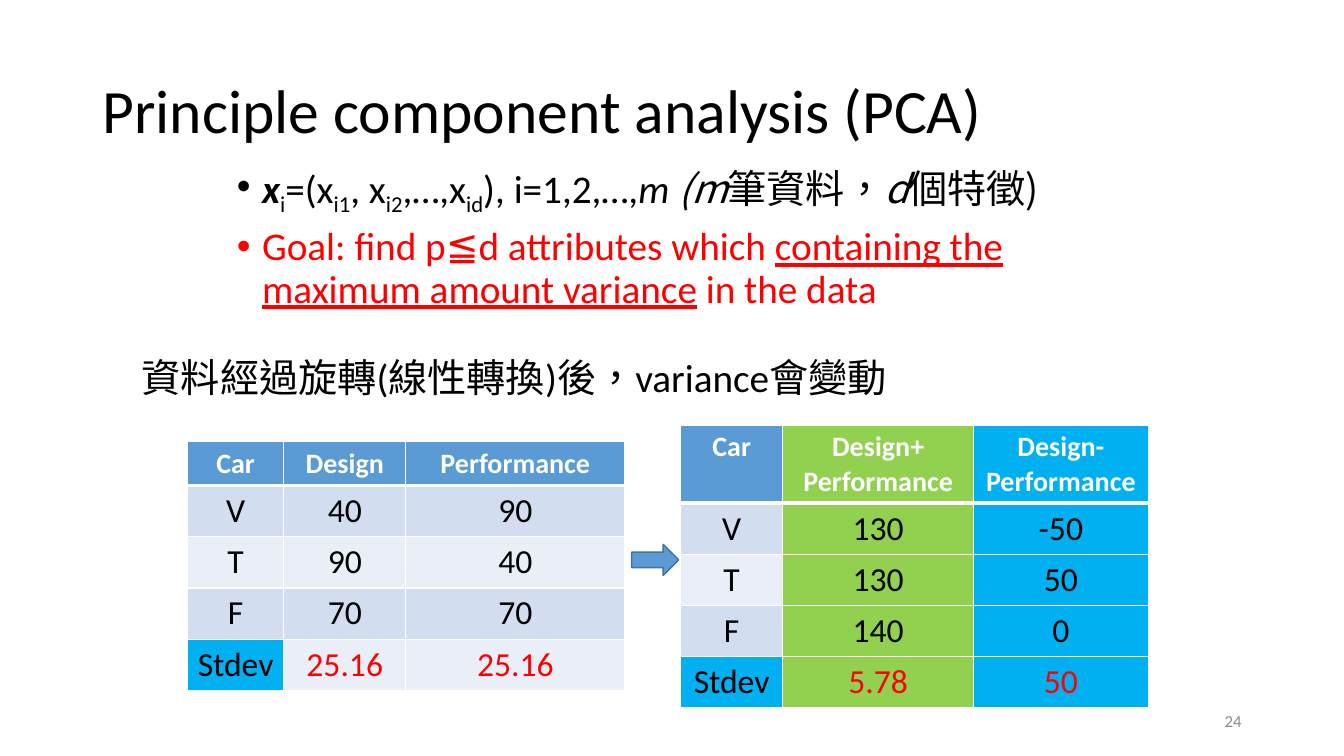
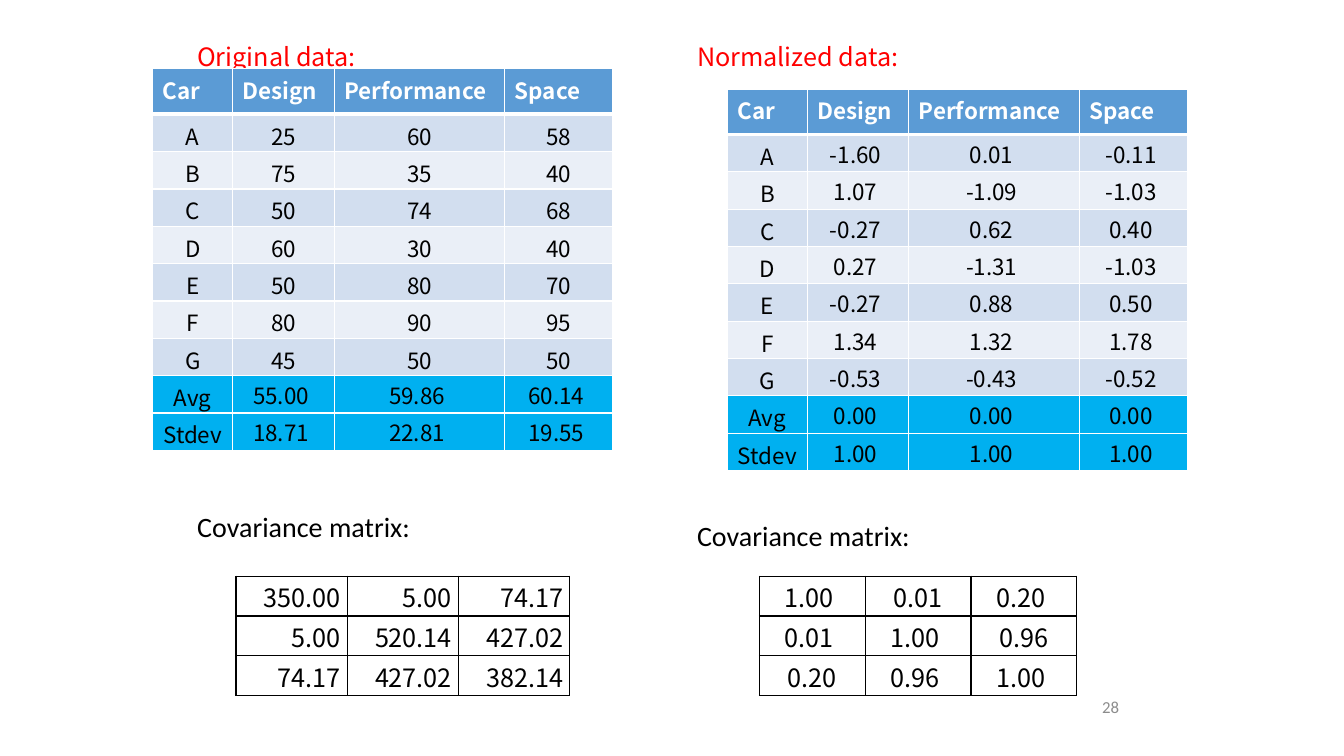
from dataclasses import dataclass, replace
from itertools import product

from lxml.etree import SubElement
from pptx import Presentation
from pptx.dml.color import RGBColor
from pptx.enum.lang import MSO_LANGUAGE_ID as Language
from pptx.enum.shapes import MSO_SHAPE as Preset
from pptx.enum.text import MSO_ANCHOR as Anchor, MSO_AUTO_SIZE as AutoSize, PP_ALIGN as Align
from pptx.oxml.ns import qn
from pptx.util import Emu, Inches, Pt


@dataclass(frozen=True)
class Theme:
    ink: str = "000000"
    paper: str = "FFFFFF"
    accent: str = "FF0000"
    muted: str = "8C8C8C"
    blue: str = "5B9BD5"
    blue_edge: str = "43739E"
    band_dark: str = "D2DEEF"
    band_light: str = "EAEFF7"
    sky: str = "00B0F0"
    green: str = "92D050"
    latin: str = "Calibri"
    cjk: str = "Noto Sans CJK SC"
    title: int = 44
    body: int = 28
    cell: int = 24
    label: int = 20
    heading: int = 18
    data: int = 16
    footer: int = 12


T = Theme()
WIDTH, HEIGHT = Inches(13.33), Inches(7.5)
COLUMNS, ROWS = 160, 90


@dataclass(frozen=True)
class Box:
    """A place on the slide, in grid columns and rows."""
    left: float
    top: float
    width: float = 0
    height: float = 0

    def inside(self, dx, dy, width=0, height=0):
        return Box(self.left + dx, self.top + dy, width, height)

    def emu(self):
        return (across(self.left), down(self.top),
                across(self.width), down(self.height))


@dataclass(frozen=True)
class Style:
    size: float
    color: str = T.ink
    font: str = T.latin
    bold: bool = False
    italic: bool = False
    underline: bool = False
    baseline: int = 0


@dataclass(frozen=True)
class CellLook:
    style: Style
    fill: str = ""
    align: Align = Align.CENTER
    anchor: Anchor = Anchor.TOP
    insets: tuple = (0.1, 0.05, 0.1, 0.05)
    line: str = T.paper


TIGHT = (0.01, 0.01, 0.01, 0)
NO_BOTTOM = (0.1, 0.05, 0.1, 0)
NARROW_SIDES = (0.08, 0.05, 0.08, 0.05)


def across(columns):
    return Emu(round(WIDTH * columns / COLUMNS))


def down(rows):
    return Emu(round(HEIGHT * rows / ROWS))


def rgb(color):
    return RGBColor.from_string(color)


def add_run(paragraph, text, style):
    run = paragraph.add_run()
    run.text = text
    font = run.font
    font.size, font.bold, font.italic = Pt(style.size), style.bold, style.italic
    font.underline = style.underline
    font.color.rgb = rgb(style.color)
    font.name = style.font
    font.language_id = Language.TAIWAN if hasattr(Language, "TAIWAN") else None
    properties = run._r.get_or_add_rPr()
    properties.set("lang", "zh-TW")
    SubElement(properties, qn("a:ea"), typeface=T.cjk)
    if style.baseline:
        properties.set("baseline", str(style.baseline * 1000))


def add_text(slide, box, text, style, align=Align.LEFT, anchor=Anchor.TOP):
    frame = slide.shapes.add_textbox(*box.emu()).text_frame
    frame.word_wrap = True
    frame.vertical_anchor = anchor
    paragraph = frame.paragraphs[0]
    paragraph.alignment = align
    add_run(paragraph, text, style)


def add_page_number(slide, box, number):
    add_text(slide, box, number, Style(T.footer, T.muted), Align.RIGHT, Anchor.MIDDLE)


def place(placeholder, box, anchor):
    placeholder.left, placeholder.top, placeholder.width, placeholder.height = box.emu()
    frame = placeholder.text_frame
    frame.auto_size = AutoSize.NONE
    frame.word_wrap = True
    frame.vertical_anchor = anchor
    return frame


def add_title(slide, box, text):
    paragraph = place(slide.shapes.title, box, Anchor.MIDDLE).paragraphs[0]
    paragraph.alignment = Align.LEFT
    paragraph.line_spacing = 0.9
    add_run(paragraph, text, Style(T.title))


def add_bullets(slide, box, bullets):
    frame = place(slide.placeholders[1], box, Anchor.TOP)
    for index, runs in enumerate(bullets):
        paragraph = frame.add_paragraph() if index else frame.paragraphs[0]
        paragraph.line_spacing = 0.9
        paragraph.space_before = Pt(10)
        indent = paragraph._p.get_or_add_pPr()
        indent.set("marL", str(Inches(0.25)))
        indent.set("indent", str(-Inches(0.25)))
        for text, style in runs:
            add_run(paragraph, text, style)


def add_border(cell, side, color, points):
    line = SubElement(cell._tc.get_or_add_tcPr(), qn("a:ln" + side), w=str(Pt(points)))
    SubElement(SubElement(line, qn("a:solidFill")), qn("a:srgbClr"), val=color)


def fill_cell(cell, text, look, thick_side=""):
    for side in "LRTB":
        add_border(cell, side, look.line, 3 if side == thick_side else 1)
    if look.fill:
        cell.fill.solid()
        cell.fill.fore_color.rgb = rgb(look.fill)
    else:
        cell.fill.background()
    cell.margin_left, cell.margin_top, cell.margin_right, cell.margin_bottom = map(
        Inches, look.insets)
    cell.vertical_anchor = look.anchor
    paragraph = cell.text_frame.paragraphs[0]
    paragraph.alignment = look.align
    for index, line in enumerate(text.split("\n")):
        if index:
            paragraph.add_line_break()
        add_run(paragraph, line, look.style)


def add_grid(slide, corner, widths, heights, rows, look_of, headed=True):
    """Add a table whose cells are styled by look_of(row, column, text)."""
    box = replace(corner, width=sum(widths), height=sum(heights))
    table = slide.shapes.add_table(len(rows), len(widths), *box.emu()).table
    table.first_row = table.horz_banding = False
    for column, width in zip(table.columns, widths):
        column.width = across(width)
    for row, height in zip(table.rows, heights):
        row.height = down(height)
    for r, c in product(range(len(rows)), range(len(widths))):
        thick = {0: "B", 1: "T"}.get(r, "") if headed else ""
        fill_cell(table.cell(r, c), rows[r][c], look_of(r, c, rows[r][c]), thick)


def band(row):
    return T.band_dark if row % 2 else T.band_light


def car_table(slide, corner, widths, header_height, rows, column_fills):
    def look_of(r, c, text):
        last = r == len(rows) - 1
        if r == 0:
            return CellLook(Style(T.label, T.paper, bold=True),
                            column_fills.get(c, T.blue), insets=NARROW_SIDES)
        fill = T.sky if last and c == 0 else column_fills.get(c, band(r))
        return CellLook(Style(T.cell, T.accent if last and c else T.ink), fill,
                        insets=NARROW_SIDES)

    heights = [header_height] + [6.1] * (len(rows) - 1)
    add_grid(slide, corner, widths, heights, rows, look_of)


def data_table(slide, corner, rows):
    def look_of(r, c, text):
        if r == 0:
            return CellLook(Style(T.data, T.paper, T.cjk, bold=True), T.blue, Align.LEFT)
        fill = T.sky if r >= len(rows) - 2 else band(r)
        look = CellLook(Style(T.data, font=T.cjk), fill, insets=NO_BOTTOM)
        if "." in text:
            look = replace(look, anchor=Anchor.MIDDLE, insets=TIGHT)
        return look

    heights = [5.4] + [4.45] * (len(rows) - 1)
    add_grid(slide, corner, [9.5, 12.1, 20.3, 12.9], heights, rows, look_of)


def covariance_table(slide, corner, column, rows, align):
    look = CellLook(Style(T.heading, font=T.cjk), align=align, anchor=Anchor.MIDDLE,
                    insets=TIGHT, line=T.ink)
    add_grid(slide, corner, [column] * 3, [4.73] * 3, rows,
             lambda r, c, text: look, headed=False)


def data_rows(lines):
    """Split lines into cells; decimals keep the trailing space of their format."""
    header = ["Car", "Design", "Performance", "Space"]
    return [header] + [[word + " " * ("." in word) for word in line.split()]
                       for line in lines]


def data_panel(slide, box, heading, lines, data_at, matrix_label_y,
               matrix_at, matrix_column, matrix, align):
    add_text(slide, box.inside(0, 0, 28.3, 4.8), heading,
             Style(T.heading, T.accent, T.cjk))
    data_table(slide, box.inside(*data_at), data_rows(lines))
    add_text(slide, box.inside(0, matrix_label_y, 37.8, 5.3), "Covariance matrix:",
             Style(T.label))
    covariance_table(slide, box.inside(*matrix_at), matrix_column, matrix, align)


def pca_slide(deck):
    slide = deck.slides.add_slide(deck.slide_layouts[1])
    add_title(slide, Box(11, 4.8, 138, 17.4), "Principle component analysis (PCA)")
    plain = Style(T.body)
    sub = replace(plain, baseline=-25)
    italic = replace(plain, italic=True)
    cjk = replace(plain, font=T.cjk)
    cjk_italic = replace(cjk, italic=True)
    goal = replace(plain, color=T.accent)
    add_bullets(slide, Box(27, 19, 108, 24.6), [
        [("x", replace(italic, bold=True)), ("i", sub), ("=(x", plain), ("i1", sub),
         (", x", plain), ("i2", sub), (",…,x", plain), ("id", sub),
         ("), i=1,2,…,", plain), ("m ", italic), ("(m", cjk_italic),
         ("筆資料，", cjk), ("d", cjk_italic), ("個特徵)", cjk)],
        [("Goal: find p≦d attributes which ", goal),
         ("containing the maximum amount variance", replace(goal, underline=True)),
         (" in the data", goal)],
    ])
    add_page_number(slide, Box(113, 83.4, 36, 4.8), "24")
    car_table(slide, Box(22.3, 52.6), [11.5, 14.5, 26.1], 5.2, [
        ["Car", "Design", "Performance"],
        ["V", "40", "90"],
        ["T", "90", "40"],
        ["F", "70", "70"],
        ["Stdev", "25.16", "25.16"],
    ], {})
    arrow = slide.shapes.add_shape(Preset.RIGHT_ARROW, *Box(75.2, 64.8, 5.6, 3.7).emu())
    arrow.shadow.inherit = False
    arrow.fill.solid()
    arrow.fill.fore_color.rgb = rgb(T.blue)
    arrow.line.color.rgb = rgb(T.blue_edge)
    arrow.line.width = Pt(1)
    car_table(slide, Box(81, 50.6), [12.2, 22.7, 20.8], 9.3, [
        ["Car", "Design+\nPerformance", "Design-\nPerformance"],
        ["V", "130", "-50"],
        ["T", "130", "50"],
        ["F", "140", "0"],
        ["Stdev", "5.78", "50"],
    ], {1: T.green, 2: T.sky})
    add_text(slide, Box(15.7, 41.5, 128.5, 6.8),
             "資料經過旋轉(線性轉換)後，variance會變動", plain)


def covariance_slide(deck):
    slide = deck.slides.add_slide(deck.slide_layouts[6])
    add_page_number(slide, Box(106.4, 81.8, 28, 4.8), "28")
    data_panel(
        slide, Box(22.3, 4.3), "Original data:",
        ["A 25 60 58", "B 75 35 40", "C 50 74 68", "D 60 30 40", "E 50 80 70",
         "F 80 90 95", "G 45 50 50", "Avg 55.00 59.86 60.14", "Stdev 18.71 22.81 19.55"],
        (-4.1, 3.9), 55.8, (5.8, 64.3), 13.25,
        [["350.00 ", "5.00 ", "74.17 "],
         ["5.00 ", "520.14 ", "427.02 "],
         ["74.17 ", "427.02 ", "382.14 "]], Align.RIGHT)
    data_panel(
        slide, Box(81.8, 4.3), "Normalized data:",
        ["A -1.60 0.01 -0.11", "B 1.07 -1.09 -1.03", "C -0.27 0.62 0.40",
         "D 0.27 -1.31 -1.03", "E -0.27 0.88 0.50", "F 1.34 1.32 1.78",
         "G -0.53 -0.43 -0.52", "Avg 0.00 0.00 0.00", "Stdev 1.00 1.00 1.00"],
        (4.8, 6.3), 56.8, (8.6, 64.3), 12.6,
        [["1.00 ", "0.01", "0.20 "],
         ["0.01 ", "1.00 ", "0.96"],
         ["0.20", "0.96 ", "1.00 "]], Align.CENTER)


def main():
    deck = Presentation()
    deck.slide_width, deck.slide_height = WIDTH, HEIGHT
    pca_slide(deck)
    covariance_slide(deck)
    deck.save("out.pptx")


if __name__ == "__main__":
    main()
